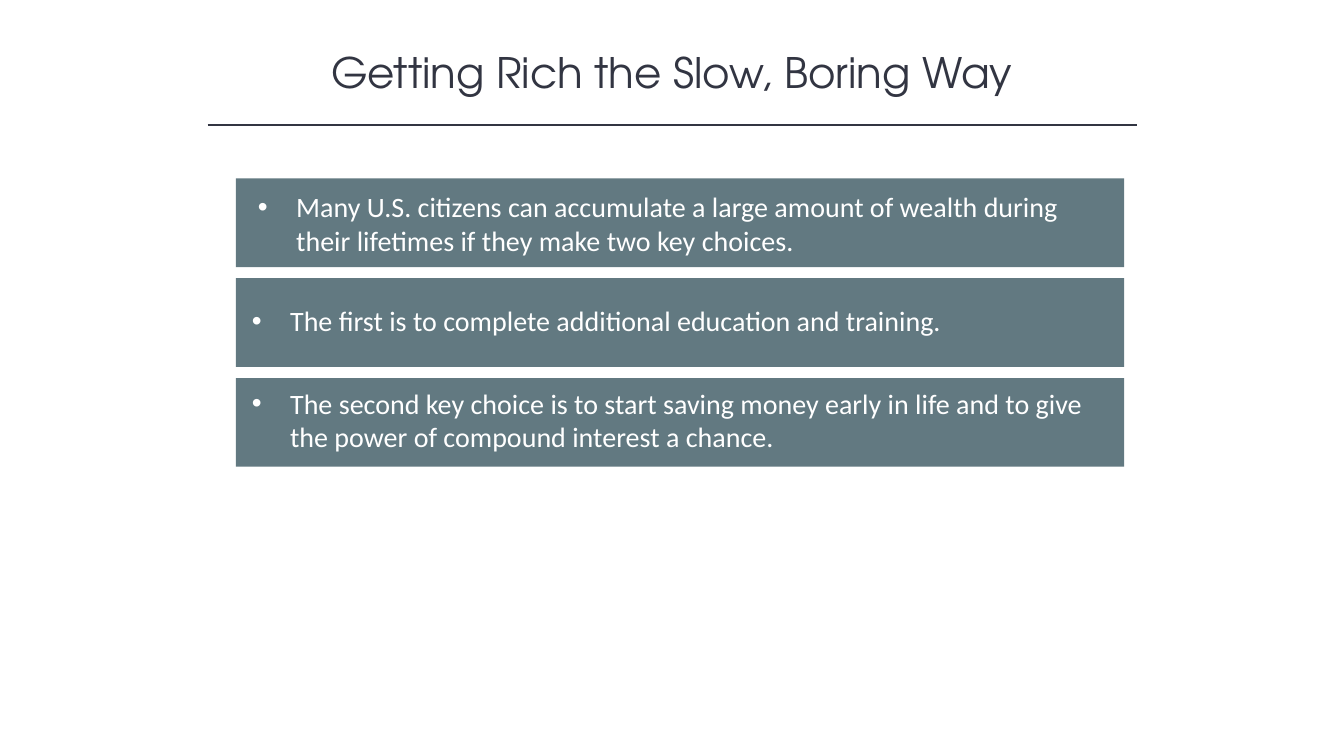
import pptx
import pptx.dml.color
import pptx.enum.shapes
import pptx.enum.text
import pptx.oxml.ns
import pptx.util
from lxml import etree

WIDTH = pptx.util.Inches(13.33)
HEIGHT = pptx.util.Inches(7.5)
COLORS = {"ink": "323542", "card": "627981", "card text": "FFFFFF"}
TITLE_FONT = {"name": "TeX Gyre Adventor", "size": pptx.util.Pt(30), "bold": False}
CARD_FONT = {"name": "Calibri", "size": pptx.util.Pt(20)}
FRAME_FORMAT = {
    "word_wrap": True,
    "auto_size": pptx.enum.text.MSO_AUTO_SIZE.NONE,
    "vertical_anchor": pptx.enum.text.MSO_ANCHOR.MIDDLE,
}

CARD_LEFT, CARD_WIDTH, CARD_HEIGHT = 17.55, 66.09, 11.73
FIRST_CARD_TOP, CARD_PITCH = 23.6, 13.2
POINT_WIDTH = 64.07
# Each point: wording, offset from the card's corner, height of its text area.
POINTS = [
    ("Many U.S. citizens can accumulate a large amount of wealth during "
     "their lifetimes if they make two key choices.", 0.9, 0.8, 10.27),
    ("The first is to complete additional education and training.", 0.45, 2.67, 5.87),
    ("The second key choice is to start saving money early in life and to give "
     "the power of compound interest a chance.", 0.45, 0.4, 10.27),
]


def color(name):
    return pptx.dml.color.RGBColor.from_string(COLORS[name])


def area(left, top, width, height):
    """Turn percentages of the slide's size into lengths."""
    return [int(share * side / 100) for share, side in
            zip((left, top, width, height), (WIDTH, HEIGHT, WIDTH, HEIGHT))]


def apply(target, values):
    for name, value in values.items():
        setattr(target, name, value)


def write(shape, wording, font, color_name, alignment):
    apply(shape.text_frame, FRAME_FORMAT)
    paragraph = shape.text_frame.paragraphs[0]
    paragraph.text = wording
    paragraph.alignment = alignment
    apply(paragraph.runs[0].font, font)
    paragraph.runs[0].font.color.rgb = color(color_name)
    return paragraph


def add_title(slide, wording):
    title = slide.shapes.title
    apply(title, dict(zip(("left", "top", "width", "height"),
                          area(12.5, 5.47, 75, 8.13))))
    write(title, wording, TITLE_FONT, "ink", pptx.enum.text.PP_ALIGN.CENTER)


def add_title_rule(slide):
    left, top, right, bottom = area(15.45, 16.53, 84.62, 16.53)
    rule = slide.shapes.add_connector(
        pptx.enum.shapes.MSO_CONNECTOR.STRAIGHT, left, top, right, bottom)
    rule.line.color.rgb = color("ink")
    rule.line.width = pptx.util.Pt(1)
    etree.SubElement(rule._element.spPr, pptx.oxml.ns.qn("a:effectLst"))


def add_block(group, *shares):
    block = group.shapes.add_shape(
        pptx.enum.shapes.MSO_SHAPE.RECTANGLE, *area(*shares))
    block.shadow.inherit = False
    block.fill.solid()
    block.fill.fore_color.rgb = color("card")
    block.line.fill.background()
    return block


def add_bullet(paragraph):
    properties = paragraph._p.get_or_add_pPr()
    indent = pptx.util.Inches(0.38)
    properties.set("marL", str(indent))
    properties.set("indent", str(-indent))
    for tag, name, value in (("a:buFont", "typeface", "Arial"),
                             ("a:buChar", "char", "•")):
        etree.SubElement(properties, pptx.oxml.ns.qn(tag)).set(name, value)


def add_card(slide, top, wording, inset, drop, height):
    card = slide.shapes.add_group_shape()
    add_block(card, CARD_LEFT, top, CARD_WIDTH, CARD_HEIGHT)
    point = add_block(card, CARD_LEFT + inset, top + drop, POINT_WIDTH, height)
    add_bullet(write(point, wording, CARD_FONT, "card text",
                     pptx.enum.text.PP_ALIGN.LEFT))


def main():
    deck = pptx.Presentation()
    deck.slide_width, deck.slide_height = WIDTH, HEIGHT
    slide = deck.slides.add_slide(deck.slide_layouts.get_by_name("Title Only"))
    add_title(slide, "Getting Rich the Slow, Boring Way")
    add_title_rule(slide)
    for row, point in enumerate(POINTS):
        add_card(slide, FIRST_CARD_TOP + row * CARD_PITCH, *point)
    deck.save("out.pptx")


if __name__ == "__main__":
    main()
